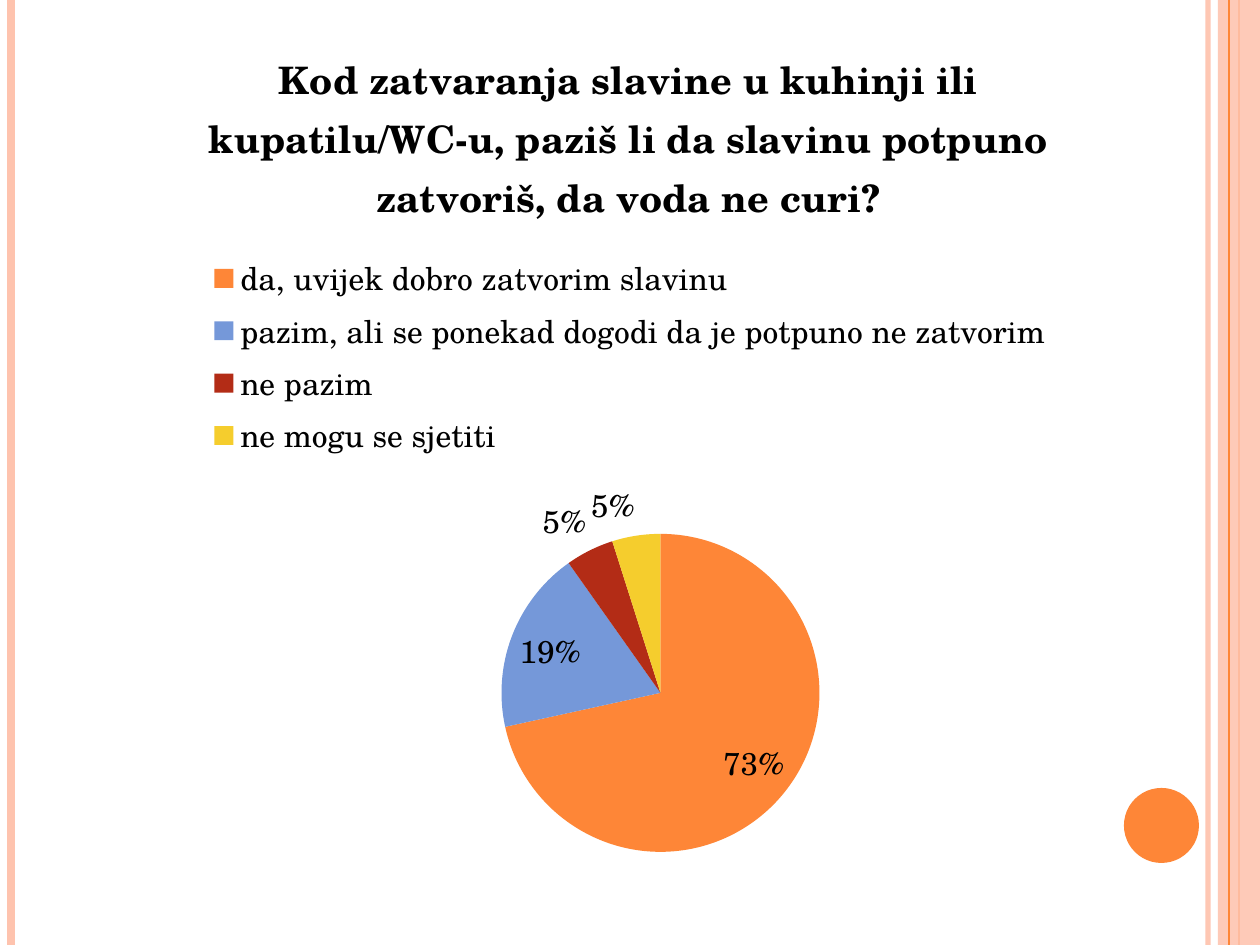
from lxml import etree
from pptx import Presentation
from pptx.chart.data import CategoryChartData
from pptx.dml.color import RGBColor
from pptx.enum.chart import XL_CHART_TYPE, XL_LABEL_POSITION, XL_LEGEND_POSITION
from pptx.enum.shapes import MSO_CONNECTOR, MSO_SHAPE
from pptx.oxml import parse_xml
from pptx.oxml.ns import nsdecls, qn
from pptx.util import Emu, Pt

PIE = XL_CHART_TYPE.PIE
BEST_FIT = XL_LABEL_POSITION.BEST_FIT
LEGEND_TOP = XL_LEGEND_POSITION.TOP
STRAIGHT = MSO_CONNECTOR.STRAIGHT
RECTANGLE, OVAL = MSO_SHAPE.RECTANGLE, MSO_SHAPE.OVAL

PX = 914400 / 126
WIDTH, HEIGHT = 1260, 945
FONT = "TeX Gyre Schola"
COLORS = {"peach": "FEC3AE", "orange": "FE8637", "blue": "7598D9",
          "red": "B32C16", "yellow": "F5CD2D", "black": "000000"}

TITLE = ("Kod zatvaranja slavine u kuhinji ili kupatilu/WC-u, "
         "paziš li da slavinu potpuno zatvoriš, da voda ne curi?")
ANSWERS = [  # answer, share in percent, slice colour
    ("da, uvijek dobro zatvorim slavinu", 73, "orange"),
    ("pazim, ali se ponekad dogodi da je potpuno ne zatvorim", 19, "blue"),
    ("ne pazim", 5, "red"),
    ("ne mogu se sjetiti", 5, "yellow"),
]


def px(*lengths):
    return [Emu(round(length * PX)) for length in lengths]


def color(name):
    return RGBColor.from_string(COLORS[name])


def style_font(font, **extra):
    values = {"name": FONT, "size": Pt(18), "bold": False, **extra}
    for key, value in values.items():
        setattr(font, key, value)
    font.color.rgb = color("black")


def set_opacity(fill_owner, percent):
    tint = next(fill_owner.iter(qn("a:srgbClr")))
    etree.SubElement(tint, qn("a:alpha"), val=str(percent * 1000))


def add_stripe(page, x, height, name, points, opacity=100):
    line = page.shapes.add_connector(STRAIGHT, *px(x, 0, x, height))
    line.line.color.rgb = color(name)
    line.line.width = Pt(points)
    properties = line._element.spPr
    if opacity < 100:
        set_opacity(properties, opacity)
    etree.SubElement(properties, qn("a:effectLst"))


def add_solid(page, kind, box, name, opacity=100):
    shape = page.shapes.add_shape(kind, *px(*box))
    shape.shadow.inherit = False
    shape.fill.solid()
    shape.fill.fore_color.rgb = color(name)
    shape.line.fill.background()
    if opacity < 100:
        set_opacity(shape._element.spPr, opacity)


def add_frame(page, box):
    """Vertical stripes on both edges, and the dot near the corner."""
    left, top, width, height = box
    right = left + width
    add_stripe(page, right - 52, height, "peach", 3, 93)
    add_stripe(page, left + 11, height, "peach", 4.5)
    add_stripe(page, right - 21, height, "orange", 1.5)
    add_solid(page, RECTANGLE, (right - 42, top, 42, height), "peach", 87)
    add_stripe(page, right - 31, height, "orange", 0.75)
    add_solid(page, OVAL, (right - 136, top + 788, 75, 75), "orange")


def place_part(parent, index, part, size, target=""):
    """Fix a chart part, given in px within the chart, as fractions of it."""
    for old in parent.findall(qn("c:layout")):
        parent.remove(old)
    layout = parse_xml(f"<c:layout {nsdecls('c')}><c:manualLayout/></c:layout>")
    manual = layout[0]
    if target:
        etree.SubElement(manual, qn("c:layoutTarget"), val=target)
    for key in ("xMode", "yMode"):
        etree.SubElement(manual, qn(f"c:{key}"), val="edge")
    for key, length, whole in zip("xywh", part, size * 2):
        etree.SubElement(manual, qn(f"c:{key}"), val=f"{length / whole:.4f}")
    parent.insert(index, layout)


def add_answer_chart(page, box):
    size = box[2:]
    data = CategoryChartData()
    data.categories = [answer for answer, _, _ in ANSWERS]
    data.add_series("Series 1", [share for _, share, _ in ANSWERS])
    chart = page.shapes.add_chart(PIE, *px(*box), data).chart
    style_font(chart.font)

    # Question as title
    chart.has_title = True
    chart.chart_title.include_in_layout = False
    para = chart.chart_title.text_frame.paragraphs[0]
    span = para.add_run()
    span.text = TITLE
    style_font(span.font, size=Pt(21.6), bold=True)
    place_part(chart.chart_title._element, 1, (158, 12), size)

    # Legend between title and pie
    chart.has_legend = True
    chart.legend.position = LEGEND_TOP
    chart.legend.include_in_layout = False
    style_font(chart.legend.font)
    place_part(chart.legend._element, 1, (157, 223, 858, 216), size)

    # Slices and percentages
    plot = chart.plots[0]
    plot.vary_by_categories = True
    for index, (_, _, name) in enumerate(ANSWERS):
        point = plot.series[0].points[index]
        point.format.fill.solid()
        point.format.fill.fore_color.rgb = color(name)
        point.format.line.fill.background()
    plot.has_data_labels = True
    labels = plot.data_labels
    formats = {"show_percentage": False, "show_value": True,
               "number_format": '0"%"', "number_format_is_linked": False,
               "position": BEST_FIT}
    for key, value in formats.items():
        setattr(labels, key, value)
    style_font(labels.font)
    plot_area = chart._chartSpace.chart.plotArea
    place_part(plot_area, 0, (457, 508, 319, 318), size, "inner")


def main():
    deck = Presentation()
    deck.slide_width, deck.slide_height = px(WIDTH, HEIGHT)
    page = deck.slides.add_slide(deck.slide_layouts[6])
    add_frame(page, (0, 0, WIDTH, HEIGHT))
    add_answer_chart(page, (44, 26, 1171, 843))
    deck.save("out.pptx")


if __name__ == "__main__":
    main()
